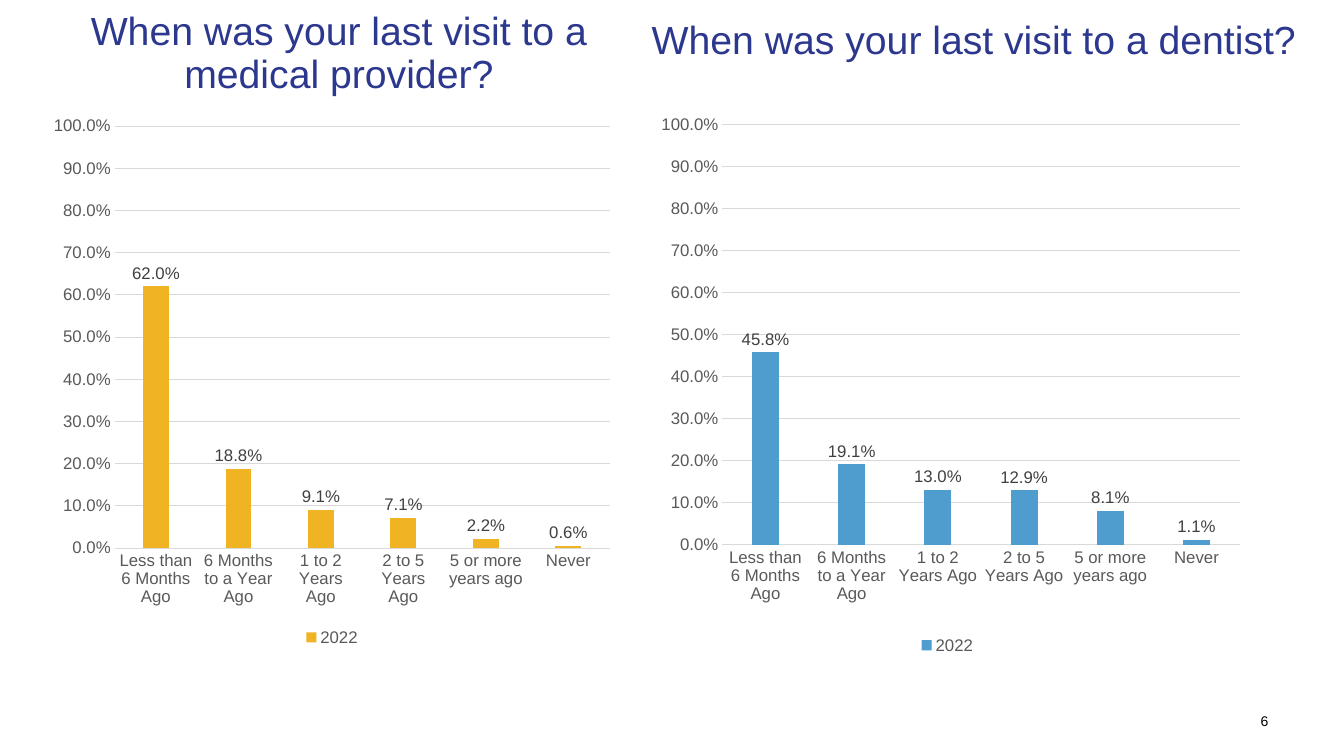
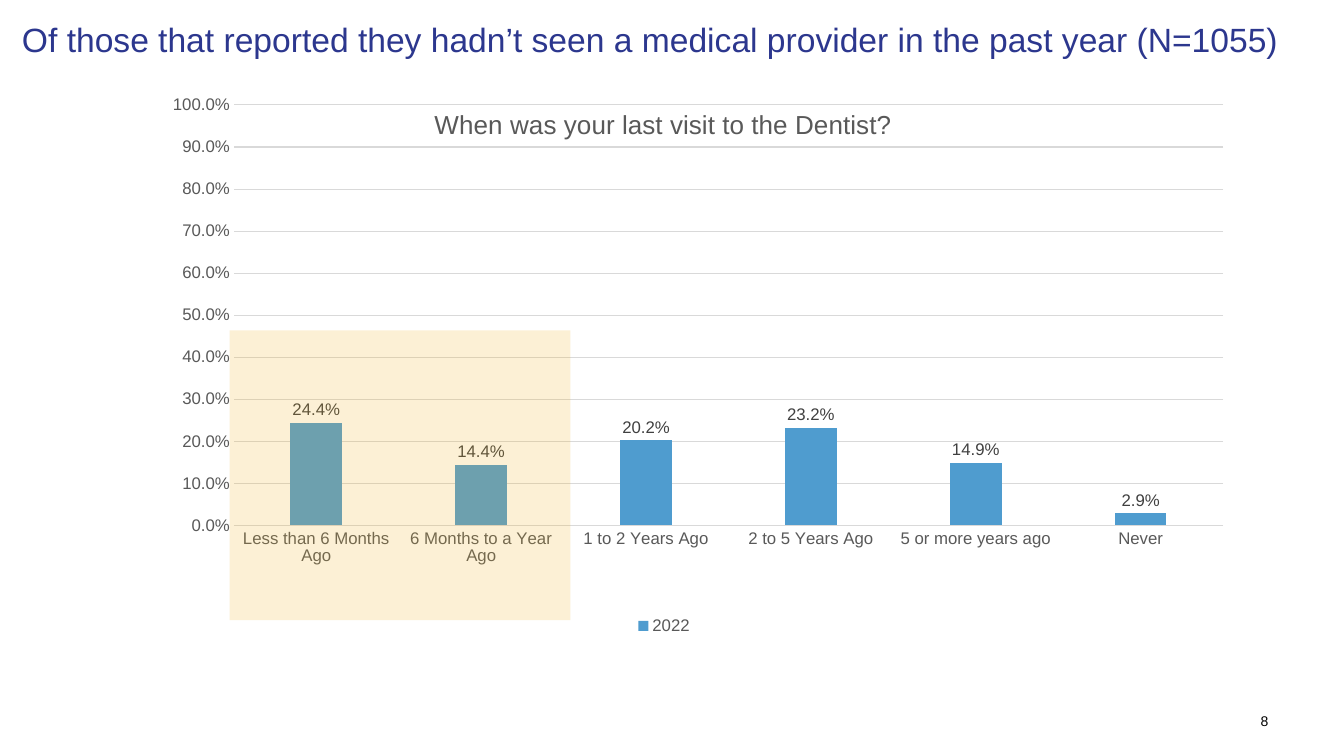
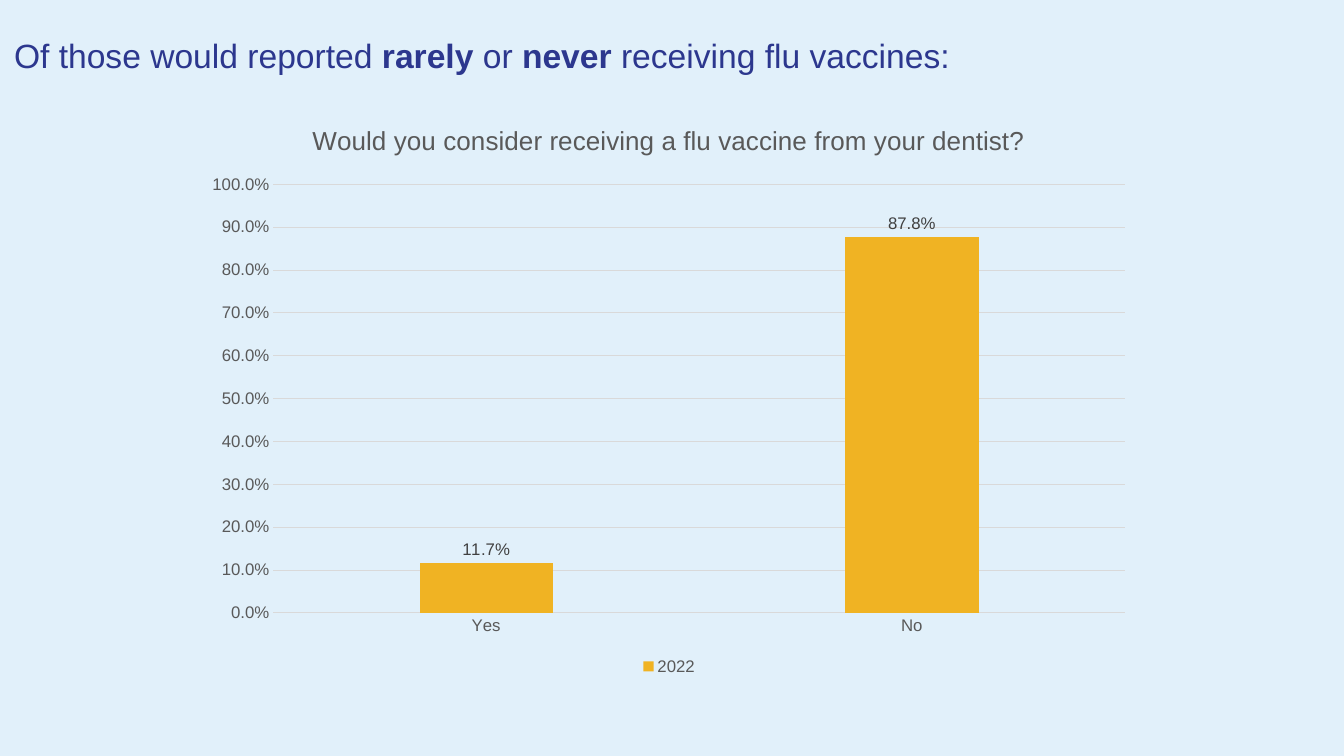
from lxml.etree import SubElement
from pptx import Presentation
from pptx.chart.data import CategoryChartData
from pptx.dml.color import RGBColor
from pptx.enum.chart import XL_CHART_TYPE, XL_LABEL_POSITION, XL_LEGEND_POSITION, XL_TICK_MARK
from pptx.enum.shapes import MSO_SHAPE
from pptx.enum.text import MSO_ANCHOR, MSO_AUTO_SIZE, PP_ALIGN
from pptx.oxml.ns import qn
from pptx.util import Pt

FONT = "Arial"
NAVY = "2C378E"
GOLD = "F0B323"
BLUE = "4F9CCF"
PALE_BLUE = "E1F0FA"
GRAY = "595959"
DARK_GRAY = "404040"
GRID_GRAY = "D9D9D9"
BLACK = "000000"
PERCENT = "0.0%"
VISIT_TIMES = [
    "Less than 6 Months Ago", "6 Months to a Year Ago", "1 to 2 Years Ago",
    "2 to 5 Years Ago", "5 or more years ago", "Never",
]
DENTIST_PLOT = {"x": 0.133, "y": 0.017, "w": 0.844, "h": 0.774}


def color(value):
    return RGBColor.from_string(value)


def style_font(font, size, value):
    font.name = FONT
    font.size = Pt(size)
    font.color.rgb = color(value)


def write_text(shape, parts, size, value, align=PP_ALIGN.LEFT):
    frame = shape.text_frame
    frame.margin_left = frame.margin_top = frame.margin_right = frame.margin_bottom = 0
    frame.word_wrap = True
    frame.auto_size = MSO_AUTO_SIZE.NONE
    frame.vertical_anchor = MSO_ANCHOR.TOP
    paragraph = frame.paragraphs[0]
    paragraph.alignment = align
    for text, bold in parts:
        run = paragraph.add_run()
        run.text = text
        run.font.bold = bold
        style_font(run.font, size, value)
    return paragraph


def write_heading(shape, parts, size, align=PP_ALIGN.LEFT):
    write_text(shape, parts, size, NAVY, align).line_spacing = 0.9


def write_title(slide, box, parts, size, align=PP_ALIGN.LEFT):
    title = slide.shapes.title
    title.left, title.top, title.width, title.height = map(Pt, box)
    write_heading(title, parts, size, align)


def add_text_box(slide, box):
    return slide.shapes.add_textbox(*map(Pt, box))


def add_page_number(slide, number):
    shape = add_text_box(slide, (864, 509, 42, 12))
    write_text(shape, [(number, False)], 10, BLACK, PP_ALIGN.RIGHT)


def set_layout(parent, index, fractions, inner=False):
    layout = parent.find(qn("c:layout"))
    if layout is None:
        layout = parent.makeelement(qn("c:layout"))
        parent.insert(index, layout)
    manual = SubElement(layout, qn("c:manualLayout"))
    if inner:
        SubElement(manual, qn("c:layoutTarget")).set("val", "inner")
    for side in ("x", "y"):
        SubElement(manual, qn(f"c:{side}Mode")).set("val", "edge")
    for side, fraction in fractions.items():
        SubElement(manual, qn(f"c:{side}")).set("val", str(fraction))


def style_axes(chart):
    for axis in (chart.category_axis, chart.value_axis):
        axis.major_tick_mark = axis.minor_tick_mark = XL_TICK_MARK.NONE
        style_font(axis.tick_labels.font, 12, GRAY)
    value_axis = chart.value_axis
    value_axis.minimum_scale, value_axis.maximum_scale = 0, 1
    value_axis.major_unit = 0.1
    value_axis.tick_labels.number_format = PERCENT
    value_axis.tick_labels.number_format_is_linked = False
    value_axis.format.line.fill.background()
    for line in (chart.category_axis.format.line, value_axis.major_gridlines.format.line):
        line.color.rgb = color(GRID_GRAY)
        line.width = Pt(0.75)


def style_columns(chart, fill):
    plot = chart.plots[0]
    plot.vary_by_categories = False
    plot.gap_width, plot.overlap = 219, -27
    series = plot.series[0]
    series.format.fill.solid()
    series.format.fill.fore_color.rgb = color(fill)
    labels = series.data_labels
    labels.show_value = True
    labels.position = XL_LABEL_POSITION.OUTSIDE_END
    labels.number_format = PERCENT
    labels.number_format_is_linked = False
    style_font(labels.font, 12, DARK_GRAY)


def add_chart_title(chart, text, x, y):
    frame = chart.chart_title.text_frame
    frame.text = text
    run = frame.paragraphs[0].runs[0]
    style_font(run.font, 18.6, GRAY)
    run.font.bold = False
    set_layout(chart.chart_title._element, 1, {"x": x, "y": y})


def add_column_chart(slide, box, categories, values, fill, plot_layout):
    data = CategoryChartData(number_format=PERCENT)
    data.categories = categories
    data.add_series("2022", values)
    chart = slide.shapes.add_chart(XL_CHART_TYPE.COLUMN_CLUSTERED, *map(Pt, box), data).chart
    style_font(chart.font, 10, BLACK)
    chart.has_title = False
    chart.has_legend = True
    chart.legend.position = XL_LEGEND_POSITION.BOTTOM
    chart.legend.include_in_layout = False
    style_font(chart.legend.font, 12, GRAY)
    style_axes(chart)
    style_columns(chart, fill)
    set_layout(chart._chartSpace.chart.plotArea, 0, plot_layout, inner=True)
    return chart


def add_highlight(slide, box):
    shape = slide.shapes.add_shape(MSO_SHAPE.RECTANGLE, *map(Pt, box))
    shape.shadow.inherit = False
    shape.line.fill.background()
    shape.fill.solid()
    shape.fill.fore_color.rgb = color(GOLD)
    solid = shape._element.spPr.find(qn("a:solidFill"))
    SubElement(solid[0], qn("a:alpha")).set("val", "19000")


def add_slide(presentation):
    return presentation.slides.add_slide(presentation.slide_layouts[5])


def build_last_visits(presentation):
    slide = add_slide(presentation)
    write_title(slide, (35, 8.6, 414, 78),
                [("When was your last visit to a medical provider?", False)],
                28, PP_ALIGN.CENTER)
    add_column_chart(slide, (30.2, 76.5, 414, 388), VISIT_TIMES,
                     [0.62, 0.188, 0.091, 0.071, 0.022, 0.006], GOLD,
                     {"x": 0.125, "y": 0.035, "w": 0.854, "h": 0.777})
    add_column_chart(slide, (457.8, 82.2, 437.8, 388), VISIT_TIMES,
                     [0.458, 0.191, 0.13, 0.129, 0.081, 0.011], BLUE, DENTIST_PLOT)
    write_heading(add_text_box(slide, (465.5, 15, 478, 65)),
                  [("When was your last visit to a dentist?", False)], 28)
    add_page_number(slide, "6")


def build_dentist_visits(presentation):
    slide = add_slide(presentation)
    heading = "Of those that reported they hadn’t seen a medical provider in the past year (N=1055)"
    write_title(slide, (15.7, 16.5, 929, 76), [(heading, False)], 24)
    chart = add_column_chart(slide, (55.7, 68.4, 837.3, 388), VISIT_TIMES,
                             [0.244, 0.144, 0.202, 0.232, 0.149, 0.029], BLUE, DENTIST_PLOT)
    add_chart_title(chart, "When was your last visit to the Dentist?", 0.3, 0.013)
    add_highlight(slide, (164, 236, 243.5, 207))
    add_page_number(slide, "8")


def build_flu_vaccines(presentation):
    slide = add_slide(presentation)
    slide.background.fill.solid()
    slide.background.fill.fore_color.rgb = color(PALE_BLUE)
    write_title(slide, (10, 28, 929, 76), [
        ("Of those would reported ", False), ("rarely", True), (" or ", False),
        ("never", True), (" receiving flu vaccines:", False),
    ], 24)
    chart = add_column_chart(slide, (139, 72.7, 678, 412.6), ["Yes", "No"],
                             [0.117, 0.878], GOLD,
                             {"x": 0.083, "y": 0.143, "w": 0.897, "h": 0.742})
    add_chart_title(chart, "Would you consider receiving a flu vaccine from your dentist?",
                    0.119, 0.028)


def main():
    presentation = Presentation()
    presentation.slide_width, presentation.slide_height = Pt(960), Pt(540)
    build_last_visits(presentation)
    build_dentist_visits(presentation)
    build_flu_vaccines(presentation)
    presentation.save("out.pptx")


if __name__ == "__main__":
    main()
